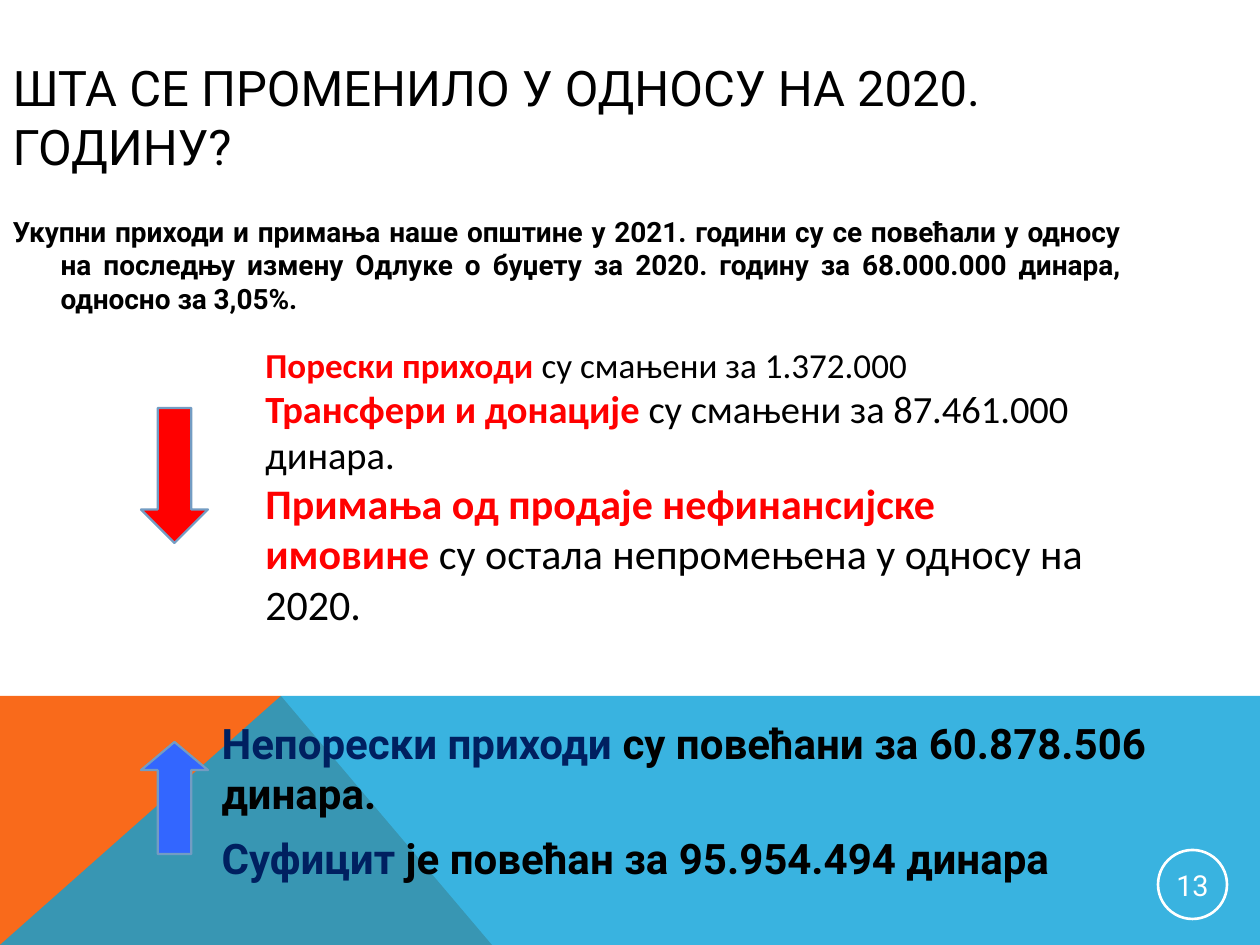
from lxml import etree
from pptx import Presentation
from pptx.dml.color import RGBColor
from pptx.enum.shapes import MSO_SHAPE
from pptx.enum.text import MSO_ANCHOR, MSO_AUTO_SIZE, PP_ALIGN
from pptx.oxml.ns import qn
from pptx.util import Pt

OVAL, DOWN, UP = MSO_SHAPE.OVAL, MSO_SHAPE.DOWN_ARROW, MSO_SHAPE.UP_ARROW
MIDDLE, TOP = MSO_ANCHOR.MIDDLE, MSO_ANCHOR.TOP
LEFT, CENTER, JUSTIFY = PP_ALIGN.LEFT, PP_ALIGN.CENTER, PP_ALIGN.JUSTIFY
FIXED = MSO_AUTO_SIZE.NONE
PX = 914400 / 126
HEX = {"black": "000000", "white": "FFFFFF", "red": "FF0000",
       "navy": "002060", "orange": "F96A1B", "sky": "08A1D9",
       "blue": "3366FF", "edge": "739CC3"}
RGB = {name: RGBColor.from_string(code) for name, code in HEX.items()}


def place(shape, box, anchor=TOP):
    shape.left, shape.top, shape.width, shape.height = [round(v * PX) for v in box]
    frame = shape.text_frame
    frame.word_wrap = True
    frame.auto_size = FIXED
    frame.vertical_anchor = anchor
    return frame


def write(frame, rows, face, align=LEFT, gap=0, indent=0):
    for i, (size, parts) in enumerate(rows):
        para = frame.paragraphs[0] if i == 0 else frame.add_paragraph()
        para.alignment = align
        para.space_before = Pt(gap)
        para.font.name, para.font.size = face, Pt(size)
        props = para._p.get_or_add_pPr()
        props.set("marL", str(round(indent * PX)))
        props.set("indent", str(round(-indent * PX)))
        props.insert_element_before(
            etree.Element(qn("a:buNone")), "a:tabLst", "a:defRPr", "a:extLst")
        for text, color, bold in parts:
            run = para.add_run()
            run.text = text
            run.font.color.rgb = RGB[color]
            run.font.bold = bold


deck = Presentation()
deck.slide_width, deck.slide_height = round(1260 * PX), round(945 * PX)
slide = deck.slides.add_slide(deck.slide_layouts[3])
shapes = slide.shapes
title, intro, rise = slide.placeholders

bands = [("orange", [(0, 945), (0, 696), (281, 696), (492, 945)]),
         ("sky", [(0, 945), (281, 696), (1260, 696), (1260, 945)])]
for level, (color, points) in enumerate(bands):
    path = shapes.build_freeform(*points[0], scale=PX)
    path.add_line_segments(points[1:], close=True)
    band = path.convert_to_shape()
    band.shadow.inherit = False
    band.fill.solid()
    band.fill.fore_color.rgb = RGB[color]
    band.line.fill.background()
    shapes._spTree.insert(2 + level, band._element)
tint = band._element.spPr.find(qn("a:solidFill"))[0]
etree.SubElement(tint, qn("a:alpha"), val="80000")

frame = place(title, (0, 38, 1100, 157), MIDDLE)
write(frame, [(28, [("ШТА СЕ ПРОМЕНИЛО У ОДНОСУ НА 2020. ГОДИНУ?", "black", False)])],
      "Roboto")

frame = place(intro, (0, 208, 1134, 156))
write(frame, [(16, [("Укупни приходи и примања наше општине у 2021. години су се "
                     "повећали у односу на последњу измену Одлуке о буџету за 2020. "
                     "годину за 68.000.000 динара, односно за 3,05%.", "black", True)])],
      "Roboto", JUSTIFY, 8, 48)

frame = place(rise, (209, 711, 1051, 144))
write(frame, [
    (24, [("Непорески приходи ", "navy", True),
          ("су повећани за 60.878.506 динара.", "black", True)]),
    (24, [("Суфицит", "navy", True),
          (" је повећан за 95.954.494 динара", "black", True)]),
], "Roboto", gap=8)

fall = shapes.add_textbox(0, 0, 0, 0)
frame = place(fall, (253, 337, 843, 300))
write(frame, [
    (20, [("Порески приходи ", "red", True),
          ("су смањени за 1.372.000", "black", False)]),
    (22, [("Трансфери и донације ", "red", True),
          ("су смањени за 87.461.000 динара.", "black", False)]),
    (24, [("Примања од продаје нефинансијске имовине", "red", True),
          (" су остала непромењена у односу на 2020.", "black", False)]),
], "Calibri")

for kind, top, high, head, color in [(DOWN, 408, 135, 0.5, "red"),
                                     (UP, 742, 112, 0.42, "blue")]:
    arrow = shapes.add_shape(kind, 0, 0, 0, 0)
    place(arrow, (141, top, 67, high))
    arrow.adjustments[0], arrow.adjustments[1] = 0.5, head
    arrow.shadow.inherit = False
    arrow.fill.solid()
    arrow.fill.fore_color.rgb = RGB[color]
    arrow.line.color.rgb = RGB["edge"]
    arrow.line.width = Pt(1.25)

badge = shapes.add_shape(OVAL, 0, 0, 0, 0)
frame = place(badge, (1158, 850, 69, 69), MIDDLE)
frame.margin_left = frame.margin_right = round(PX)
frame.margin_top = frame.margin_bottom = round(PX)
badge.shadow.inherit = False
badge.fill.background()
badge.line.color.rgb = RGB["white"]
badge.line.width = Pt(1.5)
write(frame, [(16.5, [("13", "white", False)])], "Roboto", CENTER)

deck.save("out.pptx")
